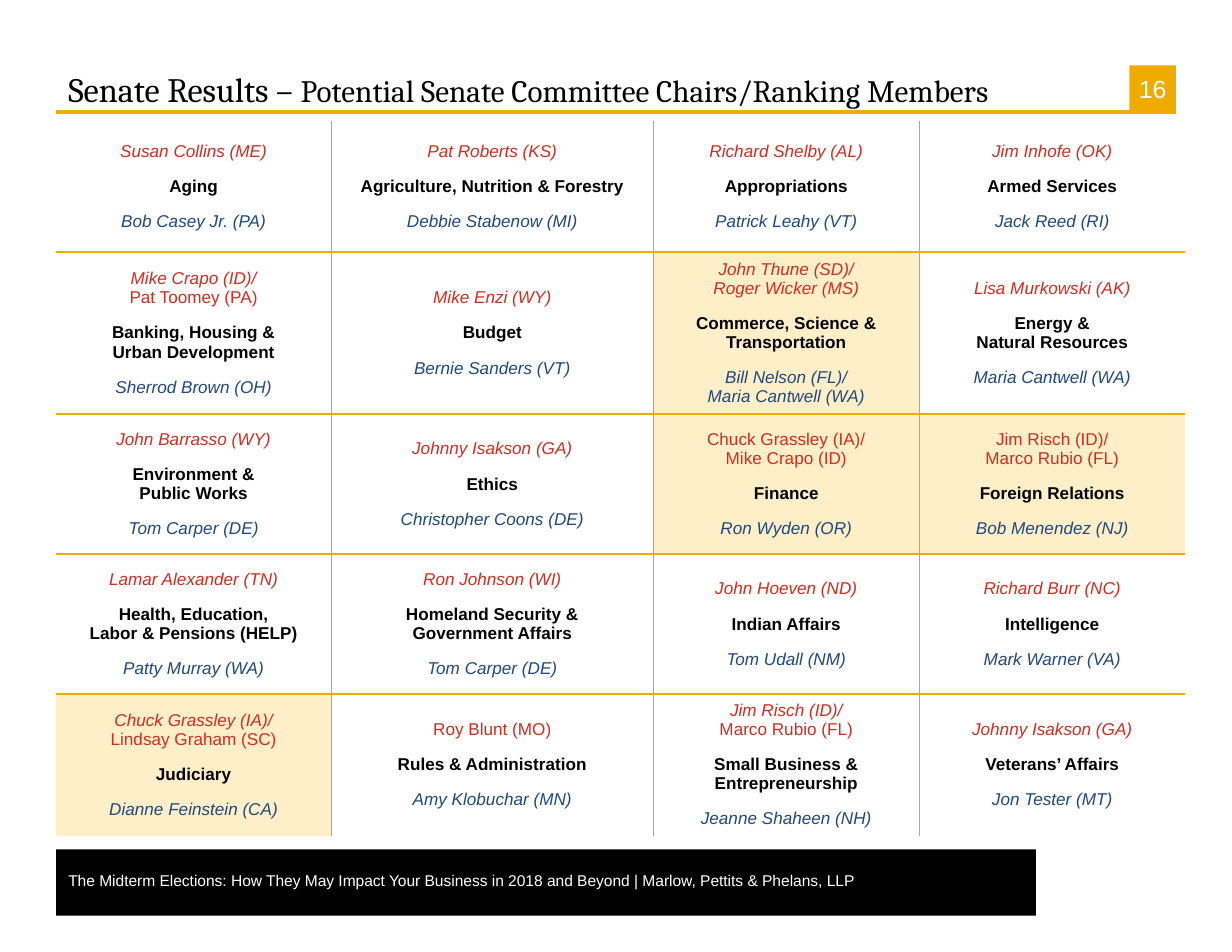
from lxml import etree
from pptx import Presentation, util as u
from pptx.dml.color import RGBColor
from pptx.enum import shapes, text
from pptx.oxml import ns

COLORS = {
    "gold": "F0AB00", "highlight": "FFEFC9", "divider": "A6A6A6",
    "chair": "D52B1E", "committee": "000000", "ranking": "1F497D",
    "black": "000000", "white": "FFFFFF",
}
GRID = u.Inches(1) // 12
COLUMNS = [29.5, 34.5, 28.5, 28.5]
ROWS = [14, 17, 15, 15, 15]
UPRIGHT = "^"
HIGHLIGHTED = {(1, 2), (2, 2), (2, 3), (4, 0)}
COMMITTEES = [
    [
        ("Susan Collins (ME)", "Aging", "Bob Casey Jr. (PA)"),
        ("Pat Roberts (KS)", "Agriculture, Nutrition & Forestry", "Debbie Stabenow (MI)"),
        ("Richard Shelby (AL)", "Appropriations", "Patrick Leahy (VT)"),
        ("Jim Inhofe (OK)", "Armed Services", "Jack Reed (RI)"),
    ],
    [
        ("Mike Crapo (ID)/|^Pat Toomey (PA)", "Banking, Housing &|Urban Development",
         "Sherrod Brown (OH)"),
        ("Mike Enzi (WY)", "Budget", "Bernie Sanders (VT)"),
        ("John Thune (SD)/|Roger Wicker (MS)", "Commerce, Science & Transportation",
         "Bill Nelson (FL)/|Maria Cantwell (WA)"),
        ("Lisa Murkowski (AK)", "Energy &|Natural Resources", "Maria Cantwell (WA)"),
    ],
    [
        ("John Barrasso (WY)", "Environment &|Public Works", "Tom Carper (DE)"),
        ("Johnny Isakson (GA)", "Ethics", "Christopher Coons (DE)"),
        ("^Chuck Grassley (IA)/|^Mike Crapo (ID)", "Finance", "Ron Wyden (OR)"),
        ("^Jim Risch (ID)/|^Marco Rubio (FL)", "Foreign Relations", "Bob Menendez (NJ)"),
    ],
    [
        ("Lamar Alexander (TN)", "Health, Education,|Labor & Pensions (HELP)",
         "Patty Murray (WA)"),
        ("Ron Johnson (WI)", "Homeland Security &|Government Affairs", "Tom Carper (DE)"),
        ("John Hoeven (ND)", "Indian Affairs", "Tom Udall (NM)"),
        ("Richard Burr (NC)", "Intelligence", "Mark Warner (VA)"),
    ],
    [
        ("Chuck Grassley (IA)/|^Lindsay Graham (SC)", "Judiciary", "Dianne Feinstein (CA)"),
        ("^Roy Blunt (MO)", "Rules & Administration", "Amy Klobuchar (MN)"),
        ("Jim Risch (ID)/|^Marco Rubio (FL)", "Small Business & Entrepreneurship",
         "Jeanne Shaheen (NH)"),
        ("Johnny Isakson (GA)", "Veterans’ Affairs", "Jon Tester (MT)"),
    ],
]


def cells(*counts):
    """Convert counts of grid cells to lengths."""
    return [u.Emu(round(count * GRID)) for count in counts]


def color(name):
    """Look up a colour by its role."""
    return RGBColor.from_string(COLORS[name])


def style(span, size, ink, face="Arial", bold=False, italic=False):
    """Format one run."""
    font = span.font
    font.name, font.size, font.bold, font.italic = face, u.Pt(size), bold, italic
    font.color.rgb = color(ink)


def set_margins(frame, left, top, right, bottom):
    """Set the insets of a frame or table cell in inches."""
    frame.margin_left, frame.margin_top = u.Inches(left), u.Inches(top)
    frame.margin_right, frame.margin_bottom = u.Inches(right), u.Inches(bottom)


def add_block(page, area, fill):
    """Add a plain filled rectangle."""
    block = page.shapes.add_shape(shapes.MSO_SHAPE.RECTANGLE, *cells(*area))
    block.shadow.inherit = False
    block.fill.solid()
    block.fill.fore_color.rgb = color(fill)
    block.line.fill.background()
    return block


def add_rule(page, start, end):
    """Add the gold rule under the title."""
    rule = page.shapes.add_connector(shapes.MSO_CONNECTOR.STRAIGHT, *cells(*start, *end))
    rule.line.color.rgb = color("gold")
    rule.line.width = u.Pt(2)
    etree.SubElement(rule._element.spPr, ns.qn("a:effectLst"))


def add_badge(page, area, number):
    """Add the page number on a gold square."""
    frame = add_block(page, area, "gold").text_frame
    set_margins(frame, 0, 0, 0, 0)
    frame.word_wrap = False
    frame.vertical_anchor = text.MSO_ANCHOR.MIDDLE
    frame.text = number
    para = frame.paragraphs[0]
    para.alignment = text.PP_ALIGN.CENTER
    style(para.runs[0], 16, "white")


def add_label(page, area, spans, face, ink, anchor, inset):
    """Add a one-paragraph text box made of (words, size) spans."""
    frame = page.shapes.add_textbox(*cells(*area)).text_frame
    frame.word_wrap = True
    frame.vertical_anchor = anchor
    set_margins(frame, 0.11, inset, 0.11, inset)
    para = frame.paragraphs[0]
    for words, size in spans:
        span = para.add_run()
        span.text = words
        style(span, size, ink, face)
    return para


def set_border(cell, side, ink):
    """Draw one side of a cell, or clear it when no colour is given."""
    edge = etree.SubElement(cell._tc.get_or_add_tcPr(), ns.qn(f"a:ln{side}"), w=str(u.Pt(1)))
    if ink:
        fill = etree.SubElement(edge, ns.qn("a:solidFill"))
        etree.SubElement(fill, ns.qn("a:srgbClr"), val=COLORS[ink])
    else:
        etree.SubElement(edge, ns.qn("a:noFill"))


def write_committee(cell, groups):
    """Write chairs, committee and ranking members into a cell."""
    lines = [(role, line, index == 0)
             for role, group in zip(("chair", "committee", "ranking"), groups)
             for index, line in enumerate(group.split("|"))]
    frame = cell.text_frame
    frame.text = "\n".join(line.lstrip(UPRIGHT) for _, line, _ in lines)
    for para, (role, line, opens_group) in zip(frame.paragraphs, lines):
        para.alignment = text.PP_ALIGN.CENTER
        if opens_group and role != "chair":
            para.space_before = u.Pt(10.3)
        named = role != "committee"
        style(para.runs[0], 11, role, bold=not named,
              italic=named and not line.startswith(UPRIGHT))


def add_committee_table(page, left, top):
    """Add the grid of committees with inner borders only."""
    area = cells(left, top, sum(COLUMNS), sum(ROWS))
    table = page.shapes.add_table(len(ROWS), len(COLUMNS), *area).table
    table.first_row = table.horz_banding = False
    for column, width in zip(table.columns, cells(*COLUMNS)):
        column.width = width
    for row, height in zip(table.rows, cells(*ROWS)):
        row.height = height
    for r, committees in enumerate(COMMITTEES):
        for c, groups in enumerate(committees):
            cell = table.cell(r, c)
            cell.vertical_anchor = text.MSO_ANCHOR.MIDDLE
            set_margins(cell, 0.1, 0.03, 0.1, 0.03)
            set_border(cell, "L", "divider" if c else None)
            set_border(cell, "R", "divider" if c < len(COLUMNS) - 1 else None)
            set_border(cell, "T", "gold" if r else None)
            set_border(cell, "B", "gold" if r < len(ROWS) - 1 else None)
            if (r, c) in HIGHLIGHTED:
                cell.fill.solid()
                cell.fill.fore_color.rgb = color("highlight")
            else:
                cell.fill.background()
            write_committee(cell, groups)


def main():
    """Build the committee slide."""
    deck = Presentation()
    deck.slide_width, deck.slide_height = cells(132, 102)
    page = deck.slides.add_slide(deck.slide_layouts[6])
    add_block(page, (6, 91, 105, 7.1), "black")
    add_rule(page, (6, 12), (126, 12))
    add_badge(page, (121, 7, 5, 5), "16")
    add_label(page, (6, 6.6, 115, 5.8),
              [("Senate Results – ", 22),
               ("Potential Senate Committee Chairs/Ranking Members", 20)],
              "Cambria", "black", text.MSO_ANCHOR.BOTTOM, 0.06)
    footer = add_label(page, (6, 93, 97, 3),
                       [("The Midterm Elections: How They May Impact Your Business in 2018 "
                         "and Beyond | Marlow, Pettits & Phelans, LLP", 10)],
                       "Arial", "white", text.MSO_ANCHOR.MIDDLE, 0)
    footer.line_spacing = 0.8
    add_committee_table(page, 6, 13)
    deck.save("out.pptx")


if __name__ == "__main__":
    main()
